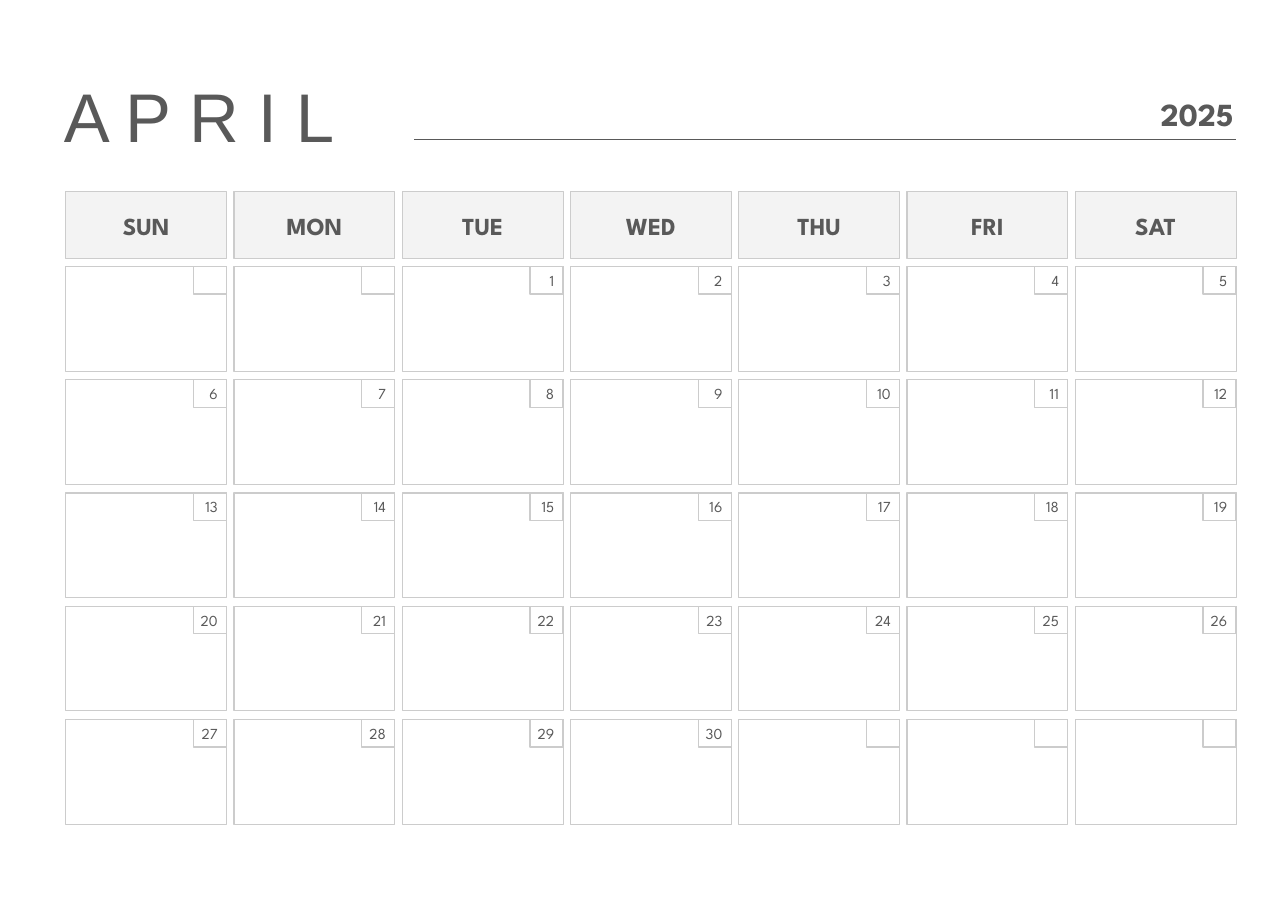
from pptx import Presentation
from pptx.dml.color import RGBColor
from pptx.enum.shapes import MSO_CONNECTOR, MSO_SHAPE
from pptx.enum.text import MSO_ANCHOR, MSO_AUTO_SIZE, PP_ALIGN
from pptx.oxml.ns import qn
from pptx.util import Pt

INK, RULE, HEADER, PAPER = "595959", "CCCCCC", "F3F3F3", "FFFFFF"
FONT = "League Spartan"
WEEKDAYS = ["SUN", "MON", "TUE", "WED", "THU", "FRI", "SAT"]
WEEKS, FIRST_COL, DAYS = 5, 2, 30
GAP_X, GAP_Y = 4.85, 5.6


def rgb(color):
    return RGBColor.from_string(color)


def write(sp, text, size, align, font=FONT, bold=False,
          anchor=MSO_ANCHOR.MIDDLE, insets=(0, 0, 0, 0)):
    """Set the text of a shape; insets run left, top, right, bottom."""
    tf = sp.text_frame
    tf.text = text
    tf.word_wrap = True
    tf.auto_size = MSO_AUTO_SIZE.NONE
    tf.vertical_anchor = anchor
    (tf.margin_left, tf.margin_top,
     tf.margin_right, tf.margin_bottom) = map(Pt, insets)
    p = tf.paragraphs[0]
    p.alignment = align
    f = p.runs[0].font
    f.name, f.size, f.bold = font, Pt(size), bold
    f.color.rgb = rgb(INK)


def add_box(s, x, y, w, h, fill=None, line=RULE, kind=MSO_SHAPE.RECTANGLE):
    sp = s.shapes.add_shape(kind, Pt(x), Pt(y), Pt(w), Pt(h))
    sp.shadow.inherit = False
    if fill:
        sp.fill.solid()
        sp.fill.fore_color.rgb = rgb(fill)
    else:
        sp.fill.background()
    if line:
        sp.line.color.rgb = rgb(line)
        sp.line.width = Pt(0.75)
    else:
        sp.line.fill.background()
    return sp


def add_heading(s, x, y, w, month, year):
    title = s.shapes.title
    title.left, title.top = Pt(x), Pt(y)
    title.width, title.height = Pt(222), Pt(54.7)
    write(title, month, 45, PP_ALIGN.LEFT, "Arial", anchor=MSO_ANCHOR.BOTTOM)

    right = x + w
    sp = add_box(s, right - 88, y + 9.4, 88, 34.6, line=None,
                 kind=MSO_SHAPE.ROUNDED_RECTANGLE)
    write(sp, year, 21, PP_ALIGN.RIGHT, bold=True)

    rule_y = Pt(y + 43.9)
    rule = s.shapes.add_connector(MSO_CONNECTOR.STRAIGHT, Pt(x + 228.9), rule_y,
                                  Pt(right), rule_y)
    rule.line.color.rgb = rgb(INK)
    rule.line.width = Pt(0.75)
    sp_pr = rule._element.spPr
    sp_pr.append(sp_pr.makeelement(qn("a:effectLst"), {}))


def add_weekdays(s, x, y, w, h):
    col_w = (w + GAP_X) / 7 - GAP_X
    for i, name in enumerate(WEEKDAYS):
        sp = add_box(s, x + i * (col_w + GAP_X), y, col_w, h, HEADER)
        write(sp, name, 16, PP_ALIGN.CENTER, bold=True, insets=(7.2,) * 4)


def add_days(s, x, y, w, h):
    col_w = (w + GAP_X) / 7 - GAP_X
    row_h = (h + GAP_Y) / WEEKS - GAP_Y
    cells = [(x + col * (col_w + GAP_X), y + row * (row_h + GAP_Y))
             for row in range(WEEKS) for col in range(7)]
    for left, top in cells:
        add_box(s, left, top, col_w, row_h, PAPER)

    tag_w, tag_h = 21.6, 18
    for day, (left, top) in enumerate(cells, 1 - FIRST_COL):
        tag = add_box(s, left + col_w - tag_w, top, tag_w, tag_h)
        if 1 <= day <= DAYS:
            write(tag, str(day), 10, PP_ALIGN.RIGHT, insets=(0, 2.9, 5.8, 2.9))


def main():
    prs = Presentation()
    prs.slide_width, prs.slide_height = Pt(841.7), Pt(595.4)
    s = prs.slides.add_slide(prs.slide_layouts[5])
    add_heading(s, 41.8, 47.5, 766, "A P R I L", "2025")
    add_weekdays(s, 43, 125.3, 764.8, 43.9)
    add_days(s, 43, 174.2, 764.8, 364.4)
    prs.save("out.pptx")


if __name__ == "__main__":
    main()
